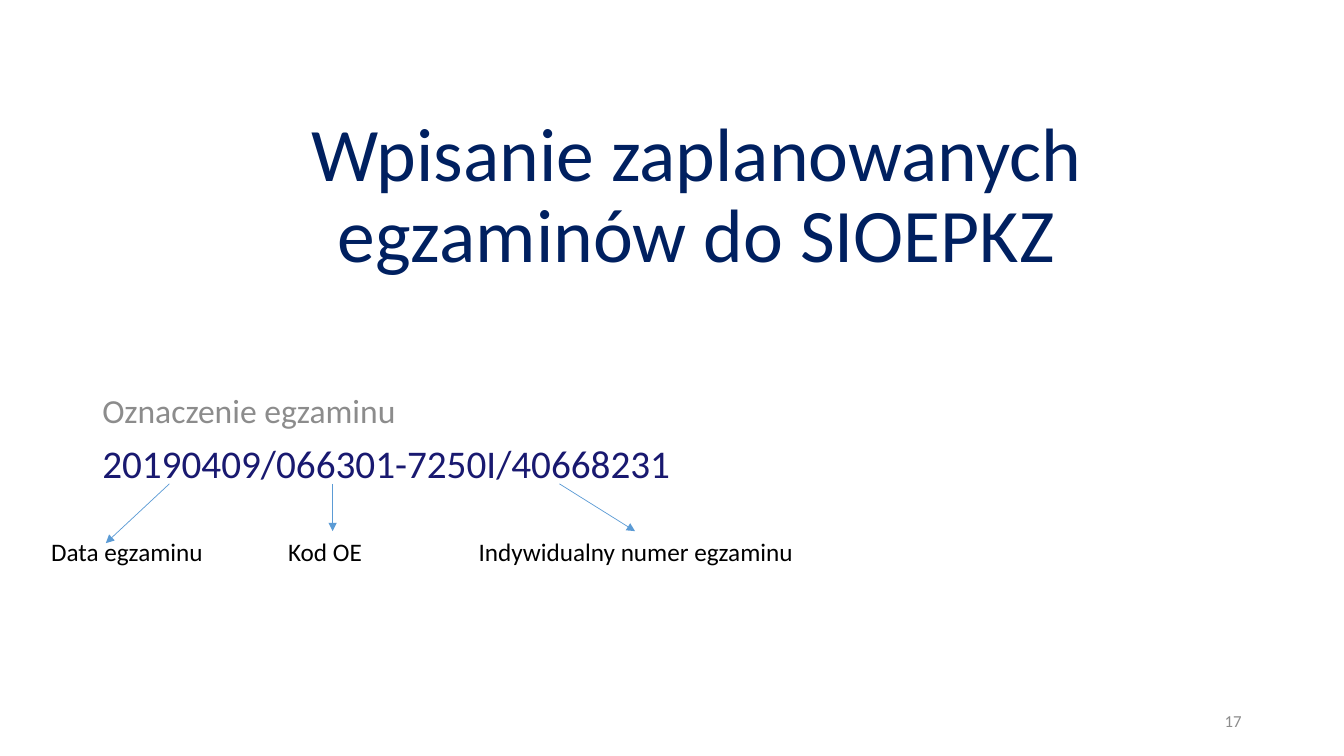
from lxml.etree import SubElement
from pptx import Presentation
from pptx.dml.color import RGBColor
from pptx.enum.shapes import MSO_CONNECTOR
from pptx.enum.text import MSO_ANCHOR, PP_ALIGN
from pptx.oxml.ns import qn
from pptx.util import Pt

# Boxes are left, top, width, height in points
TITLE = "Wpisanie zaplanowanych egzaminów do SIOEPKZ"
HEAD = "Oznaczenie egzaminu"
CODE = "20190409/066301-7250I/40668231"
PAGE = "17"
TITLE_BOX = (65.5, 60.5, 828, 142.5)
BODY_BOX = (66, 278, 828, 118)
PAGE_BOX = (678, 500.5, 216, 28.75)

LABEL_TOP, LABEL_HIGH = 379.4, 29
ARROW_TOP = 345.6
# Label, its left and width, arrow start x, arrow tip x and y
PARTS = [
    ("Data egzaminu", 29.5, 136, 121, 75.6, 388),
    ("Kod OE", 198.7, 136, 237.6, 237.6, 379.4),
    ("Indywidualny numer egzaminu", 334.8, 242, 399.6, 453.6, 379.4),
]

THEME = {
    "font": "Calibri",
    "title": (54, "002060"),
    "head": (24, "8C8C8C"),
    "code": (28, "191970"),
    "label": (18, "000000"),
    "page": (12, "8C8C8C"),
    "arrow": (0.5, "5B9BD5"),
}


def add_text(slide, box, lines, align=PP_ALIGN.LEFT, anchor=MSO_ANCHOR.TOP,
             leading=None, before=0, after=0, indent=0):
    """Add a text box; each line is a pair of text and theme style."""
    frame = slide.shapes.add_textbox(*map(Pt, box)).text_frame
    frame.word_wrap = True
    frame.vertical_anchor = anchor
    for i, (text, style) in enumerate(lines):
        para = frame.add_paragraph() if i else frame.paragraphs[0]
        para.alignment = align
        para.line_spacing = leading
        para.space_before, para.space_after = Pt(before), Pt(after)
        if indent:
            para._p.get_or_add_pPr().set("marL", str(Pt(indent)))
        run = para.add_run()
        run.text = text
        size, color = THEME[style]
        run.font.name = THEME["font"]
        run.font.size = Pt(size)
        run.font.color.rgb = RGBColor.from_string(color)


def add_arrow(slide, *ends):
    arrow = slide.shapes.add_connector(MSO_CONNECTOR.STRAIGHT, *map(Pt, ends))
    width, color = THEME["arrow"]
    arrow.line.width = Pt(width)
    arrow.line.color.rgb = RGBColor.from_string(color)
    props = arrow._element.spPr
    SubElement(props.find(qn("a:ln")), qn("a:tailEnd"), type="triangle")
    SubElement(props, qn("a:effectLst"))


def main():
    deck = Presentation()
    deck.slide_width, deck.slide_height = Pt(960), Pt(540)
    slide = deck.slides.add_slide(deck.slide_layouts[6])
    add_text(slide, TITLE_BOX, [(TITLE, "title")], align=PP_ALIGN.CENTER,
             anchor=MSO_ANCHOR.BOTTOM, leading=0.9, before=12, after=12,
             indent=36)
    add_text(slide, BODY_BOX, [(HEAD, "head"), (CODE, "code")],
             leading=0.9, before=10)
    add_text(slide, PAGE_BOX, [(PAGE, "page")], align=PP_ALIGN.RIGHT,
             anchor=MSO_ANCHOR.MIDDLE)
    for name, left, width, start, tip_x, tip_y in PARTS:
        add_text(slide, (left, LABEL_TOP, width, LABEL_HIGH),
                 [(name, "label")])
        add_arrow(slide, start, ARROW_TOP, tip_x, tip_y)
    deck.save("out.pptx")


if __name__ == "__main__":
    main()
